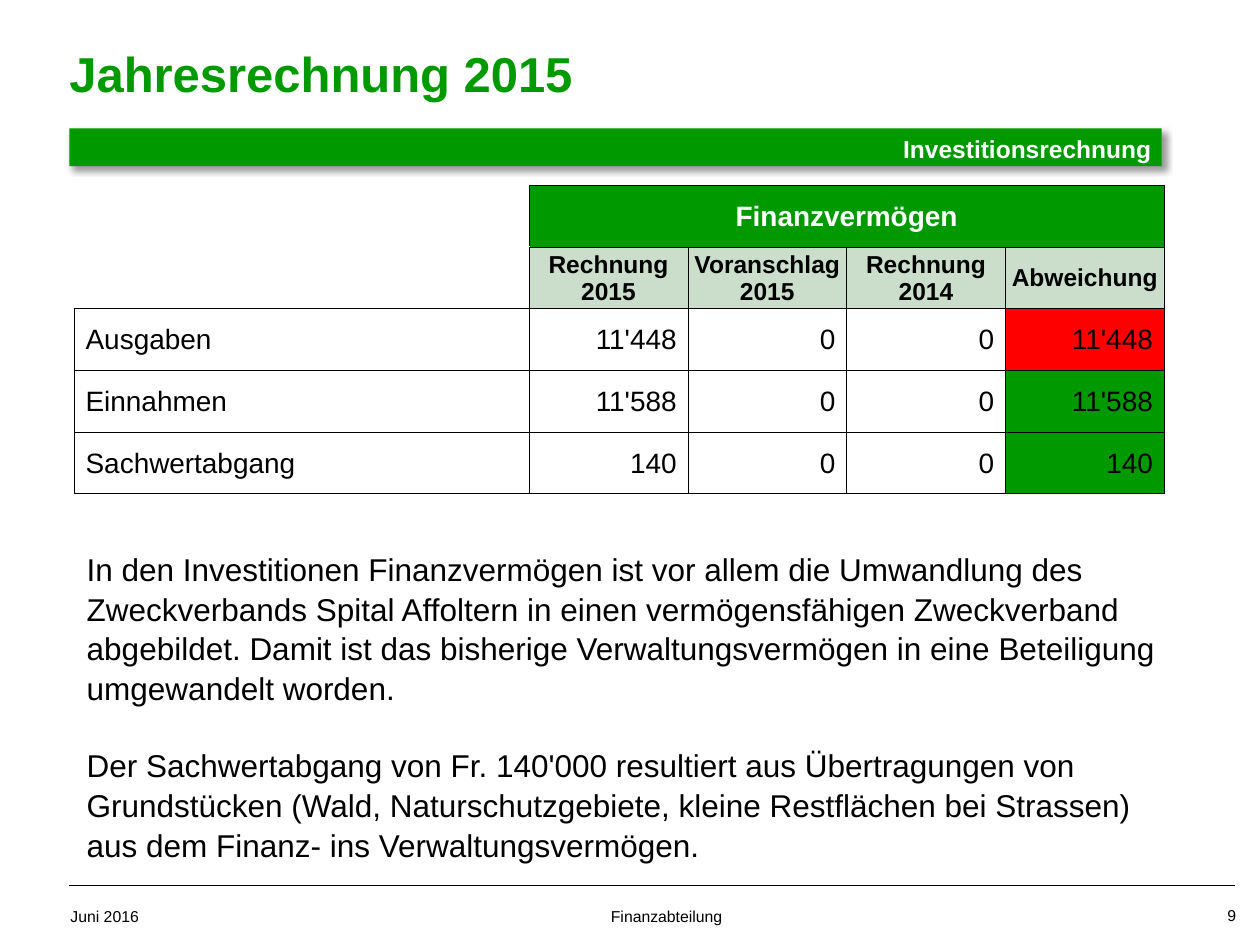
import pptx
import pptx.dml.color
import pptx.enum.shapes
import pptx.enum.text
import pptx.oxml
import pptx.oxml.ns
import pptx.util
from lxml import etree

Inches, Pt = pptx.util.Inches, pptx.util.Pt
RGBColor = pptx.dml.color.RGBColor
ALIGN, ANCHOR = pptx.enum.text.PP_ALIGN, pptx.enum.text.MSO_ANCHOR
qn = pptx.oxml.ns.qn

GREEN = RGBColor(0x00, 0x99, 0x00)
PALE = RGBColor(0xCB, 0xDE, 0xCB)
RED = RGBColor(0xFF, 0x00, 0x00)
BLACK = RGBColor(0, 0, 0)
WHITE = RGBColor(0xFF, 0xFF, 0xFF)

TITLE = "Jahresrechnung 2015"
SECTION = "Investitionsrechnung"
GROUP = "Finanzvermögen"
HEADERS = ["Rechnung\v2015", "Voranschlag\v2015", "Rechnung\v2014", "Abweichung"]
ROWS = [
    ("Ausgaben", "11'448", "0", "0", "11'448", RED),
    ("Einnahmen", "11'588", "0", "0", "11'588", GREEN),
    ("Sachwertabgang", "140", "0", "0", "140", GREEN),
]
COMMENTS = [
    "In den Investitionen Finanzvermögen ist vor allem die Umwandlung des "
    "Zweckverbands Spital Affoltern in einen vermögensfähigen Zweckverband "
    "abgebildet. Damit ist das bisherige Verwaltungsvermögen in eine Beteiligung "
    "umgewandelt worden.",
    "Der Sachwertabgang von Fr. 140'000 resultiert aus Übertragungen von "
    "Grundstücken (Wald, Naturschutzgebiete, kleine Restflächen bei Strassen) "
    "aus dem Finanz- ins Verwaltungsvermögen.",
]
COL_WIDTHS = [3.61] + [1.26] * 4
ROW_HEIGHT = 0.49


def style(p, size, color=BLACK, bold=False, align=ALIGN.LEFT):
    p.alignment = align
    for r in p.runs:
        r.font.name = "Arial"
        r.font.size = Pt(size)
        r.font.bold = bold
        r.font.color.rgb = color


def set_margins(target, left, top, right, bottom):
    target.margin_left, target.margin_top = Inches(left), Inches(top)
    target.margin_right, target.margin_bottom = Inches(right), Inches(bottom)


def add_text(slide, box, paragraphs, size, margins=(0.1, 0.05, 0.1, 0.05), **look):
    tf = slide.shapes.add_textbox(*map(Inches, box)).text_frame
    tf.word_wrap = True
    set_margins(tf, *margins)
    tf.text = "\n".join(paragraphs)
    for p in tf.paragraphs:
        style(p, size, **look)
    return tf


def add_borders(cell, sides):
    """Draw thin black lines on the given sides, a string of L, R, T and B."""
    tcPr = cell._tc.get_or_add_tcPr()
    for side in sides:
        ln = etree.SubElement(tcPr, qn("a:ln" + side), w=str(Pt(0.5)))
        fill = etree.SubElement(ln, qn("a:solidFill"))
        etree.SubElement(fill, qn("a:srgbClr"), val=str(BLACK))


def fill_cell(cell, text, size, align, fill=None, color=BLACK, bold=False,
              left=0.01, right=0.01):
    cell.text = text
    cell.vertical_anchor = ANCHOR.MIDDLE
    set_margins(cell, left, 0.01, right, 0)
    style(cell.text_frame.paragraphs[0], size, color, bold, align)
    add_borders(cell, "LRTB")
    if fill is None:
        cell.fill.background()
    else:
        cell.fill.solid()
        cell.fill.fore_color.rgb = fill


def add_result_table(slide):
    n_rows = len(ROWS) + 2
    table = slide.shapes.add_table(
        n_rows, len(COL_WIDTHS), Inches(0.59), Inches(1.47),
        Inches(sum(COL_WIDTHS)), Inches(ROW_HEIGHT * n_rows)).table
    table.first_row = table.horz_banding = False
    for col, width in zip(table.columns, COL_WIDTHS):
        col.width = Inches(width)
    for row in table.rows:
        row.height = Inches(ROW_HEIGHT)

    for i, sides in enumerate(("R", "RB")):
        add_borders(table.cell(i, 0), sides)
        table.cell(i, 0).fill.background()
    table.cell(0, 1).merge(table.cell(0, 4))
    fill_cell(table.cell(0, 1), GROUP, 16, ALIGN.CENTER, GREEN, WHITE, True)
    for j in range(2, 5):
        add_borders(table.cell(0, j), "LRTB")
    for j, header in enumerate(HEADERS, 1):
        fill_cell(table.cell(1, j), header, 14, ALIGN.CENTER, PALE, bold=True)
    for i, (label, *values, mark) in enumerate(ROWS, 2):
        fill_cell(table.cell(i, 0), label, 16, ALIGN.LEFT, left=0.09)
        for j, value in enumerate(values, 1):
            fill_cell(table.cell(i, j), value, 16, ALIGN.RIGHT,
                      mark if j == len(values) else None, right=0.09)


def add_section_bar(slide):
    sp = slide.shapes.add_shape(
        pptx.enum.shapes.MSO_SHAPE.RECTANGLE,
        Inches(0.55), Inches(1.02), Inches(8.67), Inches(0.3))
    sp.fill.solid()
    sp.fill.fore_color.rgb = GREEN
    sp.line.fill.background()
    sp.shadow.inherit = False
    effects = sp._element.spPr.find(qn("a:effectLst"))
    shadow = etree.SubElement(effects, qn("a:outerShdw"), blurRad=str(Pt(4)),
                              dist=str(Pt(3)), dir="2700000", algn="tl", rotWithShape="0")
    color = etree.SubElement(shadow, qn("a:srgbClr"), val=str(BLACK))
    etree.SubElement(color, qn("a:alpha"), val="40000")
    tf = sp.text_frame
    tf.word_wrap = True
    tf.vertical_anchor = ANCHOR.TOP
    set_margins(tf, 0, 0.04, 0.08, 0)
    tf.text = SECTION
    style(tf.paragraphs[0], 14, WHITE, True, ALIGN.RIGHT)


def add_footer(slide):
    line = slide.shapes.add_connector(
        pptx.enum.shapes.MSO_CONNECTOR.STRAIGHT,
        Inches(0.55), Inches(7.03), Inches(9.8), Inches(7.03))
    line.line.color.rgb = BLACK
    line.line.width = Pt(0.5)
    etree.SubElement(line._element.spPr, qn("a:effectLst"))
    add_text(slide, (0.56, 7.15, 1.24, 0.2), ["Juni 2016"], 9, (0, 0.05, 0.1, 0.05))
    add_text(slide, (3.47, 7.15, 3.64, 0.2), ["Finanzabteilung"], 9, align=ALIGN.CENTER)
    add_text(slide, (9.38, 7.14, 0.43, 0.21), ["9"], 9, (0.1, 0.05, 0, 0.05),
             align=ALIGN.RIGHT)


def main():
    prs = pptx.Presentation()
    prs.slide_width, prs.slide_height = Inches(10), Inches(7.5)
    slide = prs.slides.add_slide(prs.slide_layouts[6])

    add_footer(slide)
    title = add_text(slide, (0.55, 0.19, 8.59, 0.78), [TITLE], 28,
                     (0, 0.05, 0.1, 0.05), color=GREEN, bold=True)
    title.vertical_anchor = ANCHOR.MIDDLE
    add_result_table(slide)
    add_section_bar(slide)
    comments = add_text(slide, (0.59, 4.3, 8.9, 2.52), COMMENTS, 18)
    for p in comments.paragraphs:
        p.line_spacing = 1.05
    for p in comments.paragraphs[1:]:
        p.space_before = Pt(21.5)

    prs.save("out.pptx")


if __name__ == "__main__":
    main()
